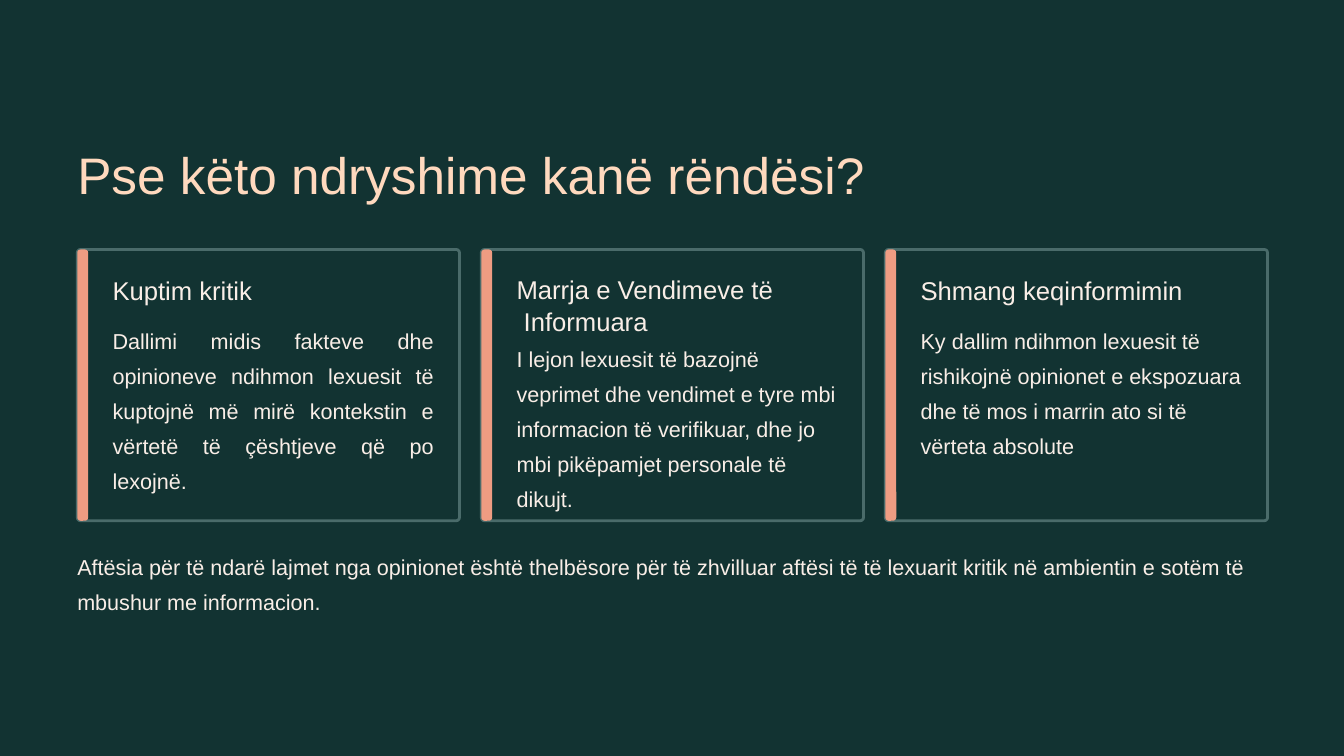
import pptx
import pptx.dml.color
import pptx.enum.shapes
import pptx.enum.text
import pptx.util

Inches = pptx.util.Inches
Pt = pptx.util.Pt
ALIGN = pptx.enum.text.PP_ALIGN
DARK, CREAM, PEACH, CORAL, BORDER = "123332", "F9EEE7", "FFD9BE", "EF9C82", "4A6B6A"


def paint(fill, color):
    fill.solid()
    fill.fore_color.rgb = pptx.dml.color.RGBColor.from_string(color)


def add_text(left, top, width, height, text, size, spacing, color=CREAM, wrap=True, align=ALIGN.LEFT):
    box = slide.shapes.add_textbox(Inches(left), Inches(top), Inches(width), Inches(height))
    frame = box.text_frame
    frame.margin_left = frame.margin_top = frame.margin_right = frame.margin_bottom = 0
    frame.word_wrap = wrap
    frame.text = text
    for paragraph in frame.paragraphs:
        paragraph.alignment = align
        paragraph.line_spacing = Pt(spacing)
        for run in paragraph.runs:
            run.font.name = "Arial"
            run.font.size = Pt(size)
            paint(run.font.fill, color)
    return frame


presentation = pptx.Presentation()
presentation.slide_width = Inches(16)
presentation.slide_height = Inches(9)
slide = presentation.slides.add_slide(presentation.slide_layouts[6])
paint(slide.background.fill, DARK)

margin = 0.92
add_text(margin, 1.67, 9.6, 0.77, "Pse këto ndryshime kanë rëndësi?", 44, 55, PEACH)

cards = [
    ("Kuptim kritik", 3.26, 3.13,
     "Dallimi midis fakteve dhe opinioneve ndihmon lexuesit të kuptojnë më mirë "
     "kontekstin e vërtetë të çështjeve që po lexojnë.", 3.8, 2.09, ALIGN.JUSTIFY),
    ("Marrja e Vendimeve të\nInformuara", 3.24, 3.78,
     "I lejon lexuesit të bazojnë veprimet dhe vendimet e tyre mbi informacion të "
     "verifikuar, dhe jo mbi pikëpamjet personale të dikujt.", 4.01, 1.68, ALIGN.LEFT),
    ("Shmang keqinformimin", 3.26, 3.47,
     "Ky dallim ndihmon lexuesit të rishikojnë opinionet e ekspozuara dhe të mos i "
     "marrin ato si të vërteta absolute", 3.8, 1.68, ALIGN.LEFT),
]

for index, (heading, heading_top, heading_width, body, body_top, body_height, align) in enumerate(cards):
    left = margin + index * 4.81
    for width, corner, color in ((4.55, 0.012, DARK), (0.13, 0.295, CORAL)):
        shape = slide.shapes.add_shape(
            pptx.enum.shapes.MSO_SHAPE.ROUNDED_RECTANGLE,
            Inches(left), Inches(2.97), Inches(width), Inches(3.23))
        shape.shadow.inherit = False
        shape.adjustments[0] = corner
        paint(shape.fill, color)
        if color == DARK:
            paint(shape.line.fill, BORDER)
            shape.line.width = Pt(2.4)
        else:
            shape.line.fill.background()

    text_left = left + 0.42
    frame = add_text(text_left, heading_top, heading_width, 0.38, heading, 22, 27.5, wrap=False)
    for paragraph in frame.paragraphs[1:]:
        paragraph._p.get_or_add_pPr().set("marL", str(Pt(6.1)))
    add_text(text_left, body_top, 3.82, body_height, body, 18.5, 30, align=align)

add_text(margin, 6.49, 14.17, 0.84,
         "Aftësia për të ndarë lajmet nga opinionet është thelbësore për të zhvilluar aftësi të "
         "të lexuarit kritik në ambientin e sotëm të mbushur me informacion.", 18.5, 30)

presentation.save("out.pptx")
